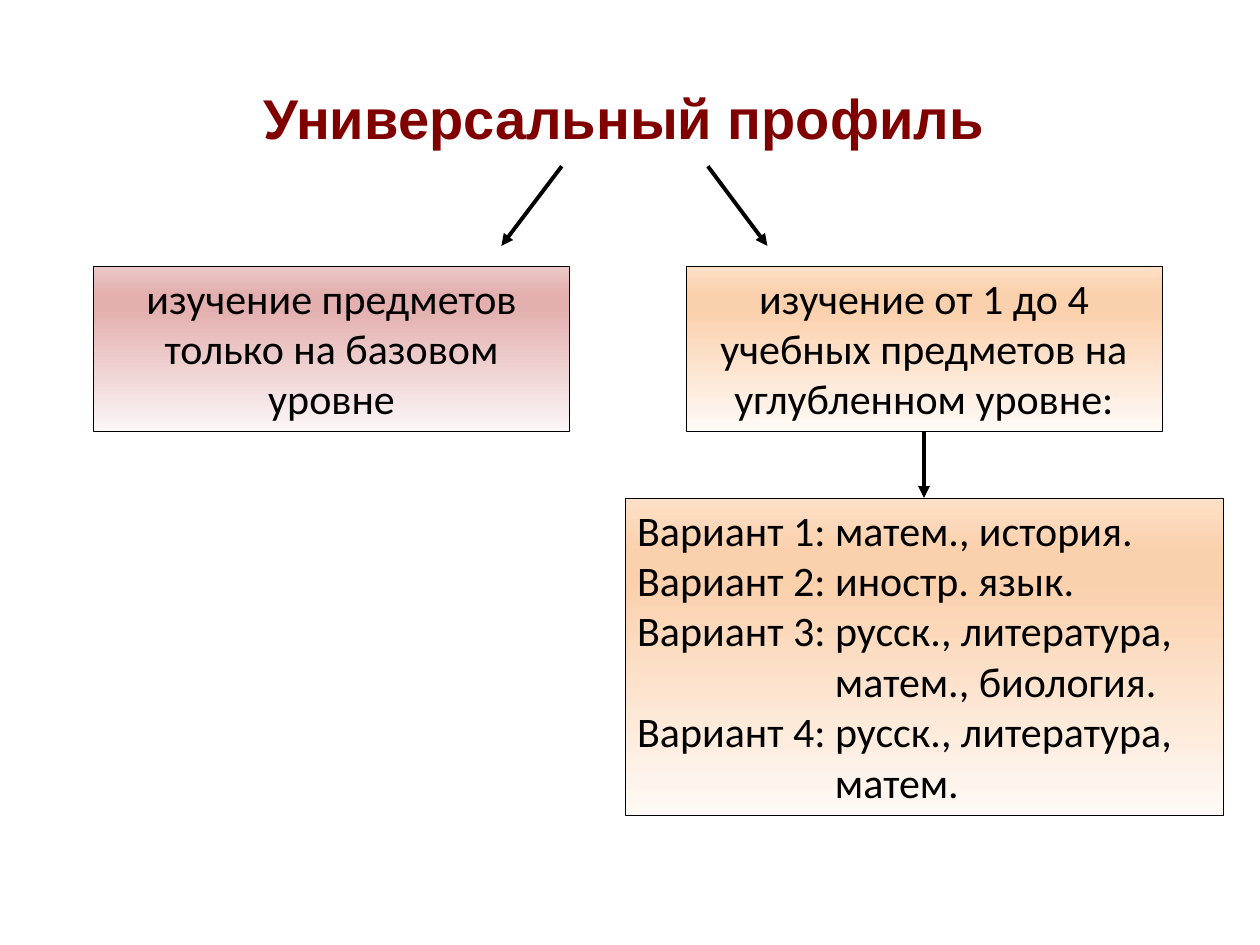
from lxml import etree
from pptx import Presentation
from pptx.dml.color import RGBColor
from pptx.enum import shapes, text
from pptx.oxml.ns import qn
from pptx.util import Pt

COLORS = {"title": "800000", "ink": "000000"}
GRADIENTS = {
    "rose": [(0, "FCF6F6"), (74, "E3B0AF"), (83, "E3B0AF"), (100, "ECCACA")],
    "peach": [(0, "FFFAF6"), (74, "FBD0AC"), (83, "FBD0AC"), (100, "FDE0C7")],
}
CENTER, LEFT = text.PP_ALIGN.CENTER, text.PP_ALIGN.LEFT


class SlideBuilder:
    body_font, title_font = "Calibri", "Arial"
    body_size, title_size = 24, 32
    hanging_indent = 113

    def __init__(self, presentation):
        self.slide = presentation.slides.add_slide(presentation.slide_layouts[5])

    def add_run(self, paragraph, words, font, size, color, bold=False):
        run = paragraph.add_run()
        run.text = words
        run.font.name = font
        run.font.size = Pt(size)
        run.font.bold = bold
        run.font.color.rgb = RGBColor.from_string(COLORS[color])

    def title(self, words, left, top, width, height):
        shape = self.slide.shapes.title
        shape.left, shape.top = Pt(left), Pt(top)
        shape.width, shape.height = Pt(width), Pt(height)
        frame = shape.text_frame
        frame.auto_size = text.MSO_AUTO_SIZE.NONE
        frame.vertical_anchor = text.MSO_ANCHOR.TOP
        paragraph = frame.paragraphs[0]
        paragraph.alignment = CENTER
        self.add_run(paragraph, words, self.title_font, self.title_size, "title", True)

    def fill_gradient(self, shape, name):
        """Fill from bottom to top with the named colour stops."""
        shape.fill.gradient()
        shape.fill.gradient_angle = 90
        stops = shape._element.spPr.find(".//" + qn("a:gsLst"))
        for stop in list(stops):
            stops.remove(stop)
        for percent, color in GRADIENTS[name]:
            stop = etree.SubElement(stops, qn("a:gs"), pos=str(percent * 1000))
            etree.SubElement(stop, qn("a:srgbClr"), val=color)

    def box(self, lines, left, top, width, height, gradient, alignment=CENTER, hanging=()):
        """Add a text rectangle; hanging holds the indexes of indented lines."""
        shape = self.slide.shapes.add_shape(
            shapes.MSO_SHAPE.RECTANGLE, Pt(left), Pt(top), Pt(width), Pt(height))
        shape.shadow.inherit = False
        self.fill_gradient(shape, gradient)
        shape.line.color.rgb = RGBColor.from_string(COLORS["ink"])
        shape.line.width = Pt(0.25)
        frame = shape.text_frame
        frame.word_wrap = True
        frame.auto_size = text.MSO_AUTO_SIZE.SHAPE_TO_FIT_TEXT
        frame.vertical_anchor = text.MSO_ANCHOR.TOP
        for index, words in enumerate(lines):
            paragraph = frame.add_paragraph() if index else frame.paragraphs[0]
            paragraph.alignment = alignment
            if index in hanging:
                properties = paragraph._p.get_or_add_pPr()
                properties.set("marL", str(Pt(self.hanging_indent)))
                properties.set("indent", str(-Pt(self.hanging_indent)))
            self.add_run(paragraph, words, self.body_font, self.body_size, "ink")
        return shape

    def arrow(self, start=(0, 0), end=(0, 0)):
        connector = self.slide.shapes.add_connector(
            shapes.MSO_CONNECTOR.STRAIGHT, *map(Pt, start + end))
        connector.line.color.rgb = RGBColor.from_string(COLORS["ink"])
        connector.line.width = Pt(2.25)
        etree.SubElement(connector.line._get_or_add_ln(), qn("a:tailEnd"), type="triangle")
        etree.SubElement(connector._element.spPr, qn("a:effectLst"))
        return connector

    def joined_arrow(self, upper, lower):
        """Link the bottom of one box to the top of another."""
        connector = self.arrow()
        connector.begin_connect(upper, 2)
        connector.end_connect(lower, 0)


def main():
    presentation = Presentation()
    presentation.slide_width, presentation.slide_height = Pt(720), Pt(540)
    builder = SlideBuilder(presentation)

    builder.title("Универсальный профиль", 13.5, 44, 686, 46)
    builder.box(["изучение предметов только на базовом уровне"],
                53.5, 152, 272, 94.5, "rose")
    advanced = builder.box(["изучение от 1 до 4 учебных предметов на углубленном уровне:"],
                           392, 152, 272, 94.5, "peach")
    builder.arrow((321, 95), (286.5, 140.5))
    builder.arrow((404.5, 95), (438.5, 140.5))
    variants = builder.box(
        ["Вариант 1: матем., история.",
         "Вариант 2: иностр. язык.",
         "Вариант 3: русск., литература, матем., биология.",
         "Вариант 4: русск., литература, матем."],
        357, 284.5, 342, 181.5, "peach", LEFT, hanging=(2, 3))
    builder.joined_arrow(advanced, variants)

    presentation.save("out.pptx")


if __name__ == "__main__":
    main()
